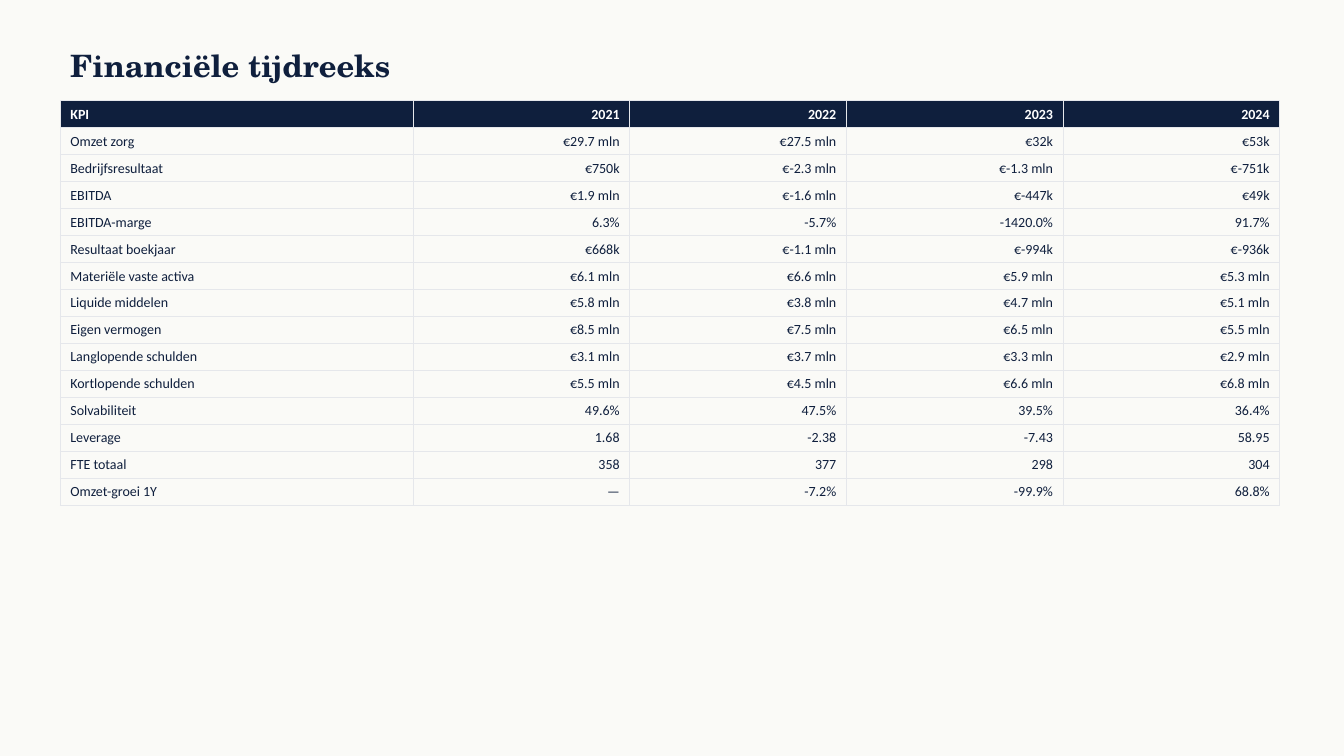
from lxml import etree
from pptx import Presentation
from pptx.dml.color import RGBColor
from pptx.enum.text import MSO_ANCHOR, PP_ALIGN
from pptx.oxml.ns import qn
from pptx.util import Cm, Pt

LEFT, RIGHT = PP_ALIGN.LEFT, PP_ALIGN.RIGHT
MIDDLE = MSO_ANCHOR.MIDDLE

NAVY, WHITE, PAPER, RULE = "0F1F3D", "FFFFFF", "FAFAF7", "E5E7EB"
HEADING_FONT, BODY_FONT = "TeX Gyre Schola", "Calibri"
ROW_HEIGHT = Cm(0.68)
KPI_WIDTH_SHARE = 3.5 / 12.1

KPI_ROWS = [
    ("KPI", "2021", "2022", "2023", "2024"),
    ("Omzet zorg", "€29.7 mln", "€27.5 mln", "€32k", "€53k"),
    ("Bedrijfsresultaat", "€750k", "€-2.3 mln", "€-1.3 mln", "€-751k"),
    ("EBITDA", "€1.9 mln", "€-1.6 mln", "€-447k", "€49k"),
    ("EBITDA-marge", "6.3%", "-5.7%", "-1420.0%", "91.7%"),
    ("Resultaat boekjaar", "€668k", "€-1.1 mln", "€-994k", "€-936k"),
    ("Materiële vaste activa", "€6.1 mln", "€6.6 mln", "€5.9 mln", "€5.3 mln"),
    ("Liquide middelen", "€5.8 mln", "€3.8 mln", "€4.7 mln", "€5.1 mln"),
    ("Eigen vermogen", "€8.5 mln", "€7.5 mln", "€6.5 mln", "€5.5 mln"),
    ("Langlopende schulden", "€3.1 mln", "€3.7 mln", "€3.3 mln", "€2.9 mln"),
    ("Kortlopende schulden", "€5.5 mln", "€4.5 mln", "€6.6 mln", "€6.8 mln"),
    ("Solvabiliteit", "49.6%", "47.5%", "39.5%", "36.4%"),
    ("Leverage", "1.68", "-2.38", "-7.43", "58.95"),
    ("FTE totaal", "358", "377", "298", "304"),
    ("Omzet-groei 1Y", "—", "-7.2%", "-99.9%", "68.8%"),
]


def paint(color_fill, color):
    color_fill.solid()
    color_fill.fore_color.rgb = RGBColor.from_string(color)


def add_run(paragraph, text, font, size, color, bold):
    run = paragraph.add_run()
    run.text = text
    run.font.name = font
    run.font.size = Pt(size)
    run.font.bold = bold
    paint(run.font.fill, color)


def add_borders(cell, color, width):
    properties = cell._tc.get_or_add_tcPr()
    for side in ("a:lnL", "a:lnR", "a:lnT", "a:lnB"):
        line = etree.SubElement(properties, qn(side), w=str(Pt(width)))
        solid = etree.SubElement(line, qn("a:solidFill"))
        etree.SubElement(solid, qn("a:srgbClr"), val=color)


def add_heading(slide, left, top, width, height):
    heading = slide.shapes.add_textbox(left, top, width, height).text_frame
    heading.word_wrap = True
    heading.vertical_anchor = MIDDLE
    add_run(heading.paragraphs[0], "Financiële tijdreeks", HEADING_FONT, 22, NAVY, True)


def add_kpi_table(slide, left, top, width):
    row_count, column_count = len(KPI_ROWS), len(KPI_ROWS[0])
    kpis = slide.shapes.add_table(
        row_count, column_count, left, top, width, ROW_HEIGHT * row_count
    ).table
    kpis.horz_banding = False

    kpi_width = int(width * KPI_WIDTH_SHARE)
    kpis.columns[0].width = kpi_width
    for year in range(1, column_count):
        kpis.columns[year].width = (width - kpi_width) // (column_count - 1)

    for row, entries in enumerate(KPI_ROWS):
        kpis.rows[row].height = ROW_HEIGHT
        is_header = row == 0
        for column, entry in enumerate(entries):
            cell = kpis.cell(row, column)
            add_borders(cell, RULE, 0.5)
            if is_header:
                paint(cell.fill, NAVY)
            else:
                cell.fill.background()
            paragraph = cell.text_frame.paragraphs[0]
            paragraph.alignment = RIGHT if column else LEFT
            add_run(paragraph, entry, BODY_FONT, 10, WHITE if is_header else NAVY, is_header)


def build_time_series_slide(deck):
    slide = deck.slides.add_slide(deck.slide_layouts[6])
    paint(slide.background.fill, PAPER)
    margin = Cm(1.52)
    add_heading(slide, margin, Cm(1.02), Cm(30.48), Cm(1.27))
    add_kpi_table(slide, margin, Cm(2.54), Cm(30.73))


def main():
    deck = Presentation()
    deck.slide_width, deck.slide_height = Cm(33.87), Cm(19.05)
    build_time_series_slide(deck)
    deck.save("out.pptx")


if __name__ == "__main__":
    main()
